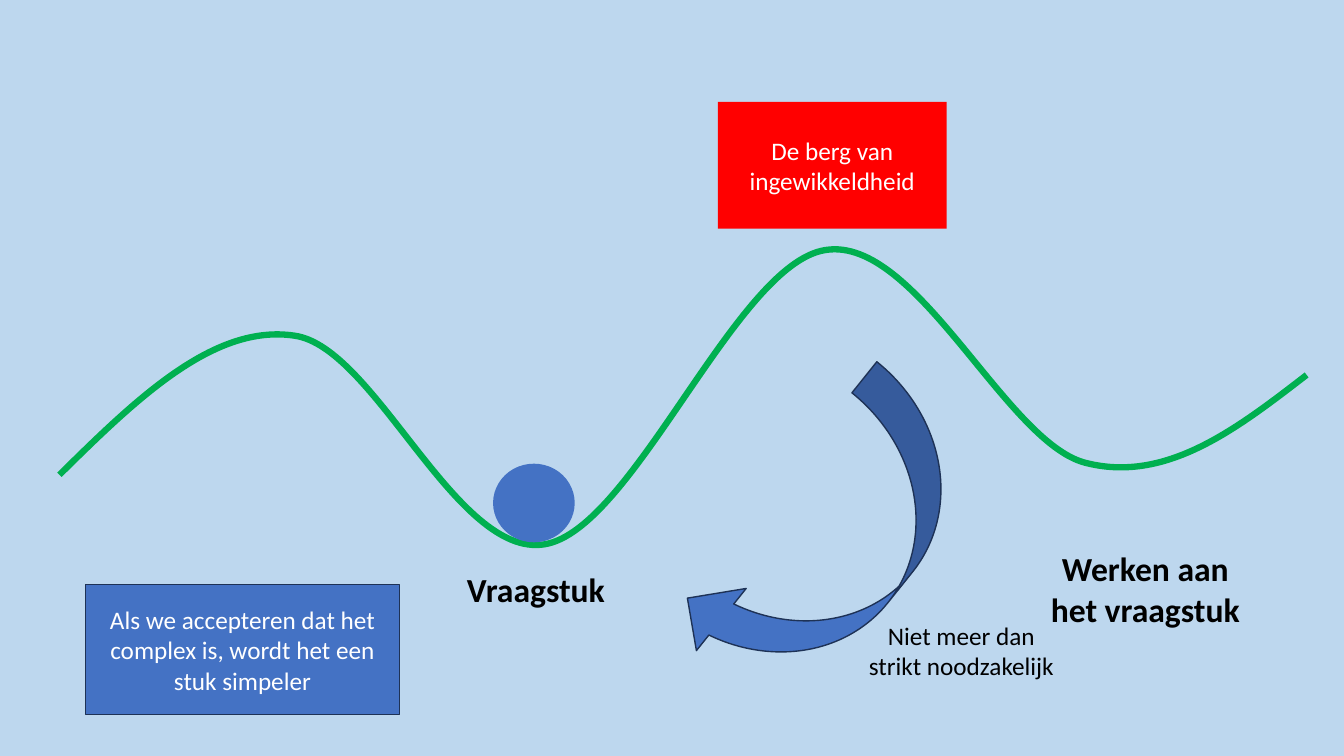
"""Builds a slide on the mountain of complexity between an issue and working on it."""
from lxml import etree
from pptx import Presentation
from pptx.dml.color import RGBColor
from pptx.enum.shapes import MSO_SHAPE
from pptx.enum.text import MSO_ANCHOR, MSO_AUTO_SIZE, PP_ALIGN
from pptx.oxml.ns import qn
from pptx.util import Inches, Pt

SKY = RGBColor(0xBD, 0xD7, 0xEE)
GREEN = RGBColor(0x00, 0xB0, 0x50)
BLUE = RGBColor(0x44, 0x72, 0xC4)
NAVY = RGBColor(0x1E, 0x32, 0x56)
RED = RGBColor(0xFF, 0x00, 0x00)
WHITE = RGBColor(0xFF, 0xFF, 0xFF)
BLACK = RGBColor(0x00, 0x00, 0x00)

RECTANGLE = MSO_SHAPE.RECTANGLE
OVAL = MSO_SHAPE.OVAL
CURVED_ARROW = MSO_SHAPE.CURVED_LEFT_ARROW
CENTER = PP_ALIGN.CENTER
MIDDLE = MSO_ANCHOR.MIDDLE
GROW = MSO_AUTO_SIZE.SHAPE_TO_FIT_TEXT

LANDSCAPE_START = (0.59, 4.71)
LANDSCAPE_CURVES = [
    [(1.35, 3.96), (2.12, 3.21), (2.92, 3.33)],
    [(3.72, 3.44), (4.52, 5.54), (5.4, 5.4)],
    [(6.28, 5.26), (7.3, 2.61), (8.19, 2.48)],
    [(9.09, 2.34), (9.97, 4.38), (10.76, 4.59)],
    [(11.56, 4.8), (12.26, 4.26), (12.96, 3.72)],
]


class SlideBuilder:
    """Holds the style and the current slide."""

    font_name = "Calibri"

    def __init__(self, slide, background):
        self.slide = slide
        slide.background.fill.solid()
        slide.background.fill.fore_color.rgb = background

    def set_text(self, frame, text, size, color, bold=False):
        paragraph = frame.paragraphs[0]
        paragraph.text = text
        paragraph.alignment = CENTER
        paragraph.font.name = self.font_name
        paragraph.font.size = Pt(size)
        paragraph.font.bold = bold
        paragraph.font.color.rgb = color

    def shape(self, kind, box, fill, line=None, rotation=0):
        shape = self.slide.shapes.add_shape(kind, *map(Inches, box))
        shape.shadow.inherit = False
        shape.rotation = rotation
        shape.fill.solid()
        shape.fill.fore_color.rgb = fill
        if line is None:
            shape.line.fill.background()
        else:
            shape.line.color.rgb = line
            shape.line.width = Pt(1)
        return shape

    def panel(self, box, text, fill, line=None):
        frame = self.shape(RECTANGLE, box, fill, line).text_frame
        frame.word_wrap = True
        frame.vertical_anchor = MIDDLE
        self.set_text(frame, text, 18, WHITE)

    def label(self, box, text, size, bold=False):
        frame = self.slide.shapes.add_textbox(*map(Inches, box)).text_frame
        frame.word_wrap = False
        frame.auto_size = GROW
        self.set_text(frame, text, size, BLACK, bold)

    def curve(self, start, segments, color, width):
        builder = self.slide.shapes.build_freeform(*map(Inches, start))
        anchors = [tuple(map(Inches, segment[-1])) for segment in segments]
        builder.add_line_segments(anchors, close=False)
        curve = builder.convert_to_shape()
        curve.shadow.inherit = False
        curve.fill.background()
        curve.line.color.rgb = color
        curve.line.width = Pt(width)
        straights = list(curve._element.iter(qn("a:lnTo")))
        for straight, segment in zip(straights, segments):
            straight.tag = qn("a:cubicBezTo")
            straight.remove(straight[0])
            for x, y in segment:
                etree.SubElement(straight, qn("a:pt"),
                                 x=str(Inches(x) - curve.left),
                                 y=str(Inches(y) - curve.top))


def main():
    presentation = Presentation()
    presentation.slide_width = Inches(13.33)
    presentation.slide_height = Inches(7.5)
    slide = presentation.slides.add_slide(presentation.slide_layouts[6])
    builder = SlideBuilder(slide, SKY)

    builder.curve(LANDSCAPE_START, LANDSCAPE_CURVES, GREEN, 4.5)
    builder.shape(OVAL, (4.89, 4.6, 0.81, 0.78), BLUE)
    builder.label((4.52, 5.59, 1.59, 0.5), "Vraagstuk", 24, bold=True)
    builder.label((10.31, 5.39, 2.1, 0.91), "Werken aan\nhet vraagstuk", 24, bold=True)
    builder.panel((7.12, 1.01, 2.27, 1.26), "De berg van ingewikkeldheid", RED)
    builder.shape(CURVED_ARROW, (7.46, 3.71, 1.58, 3.4), BLUE, NAVY, rotation=38.7)
    builder.label((8.51, 6.1, 2.05, 0.71), "Niet meer dan\nstrikt noodzakelijk", 18)
    builder.panel((0.85, 5.8, 3.11, 1.29),
                  "Als we accepteren dat het complex is, wordt het een stuk simpeler",
                  BLUE, NAVY)

    presentation.save("out.pptx")


if __name__ == "__main__":
    main()
